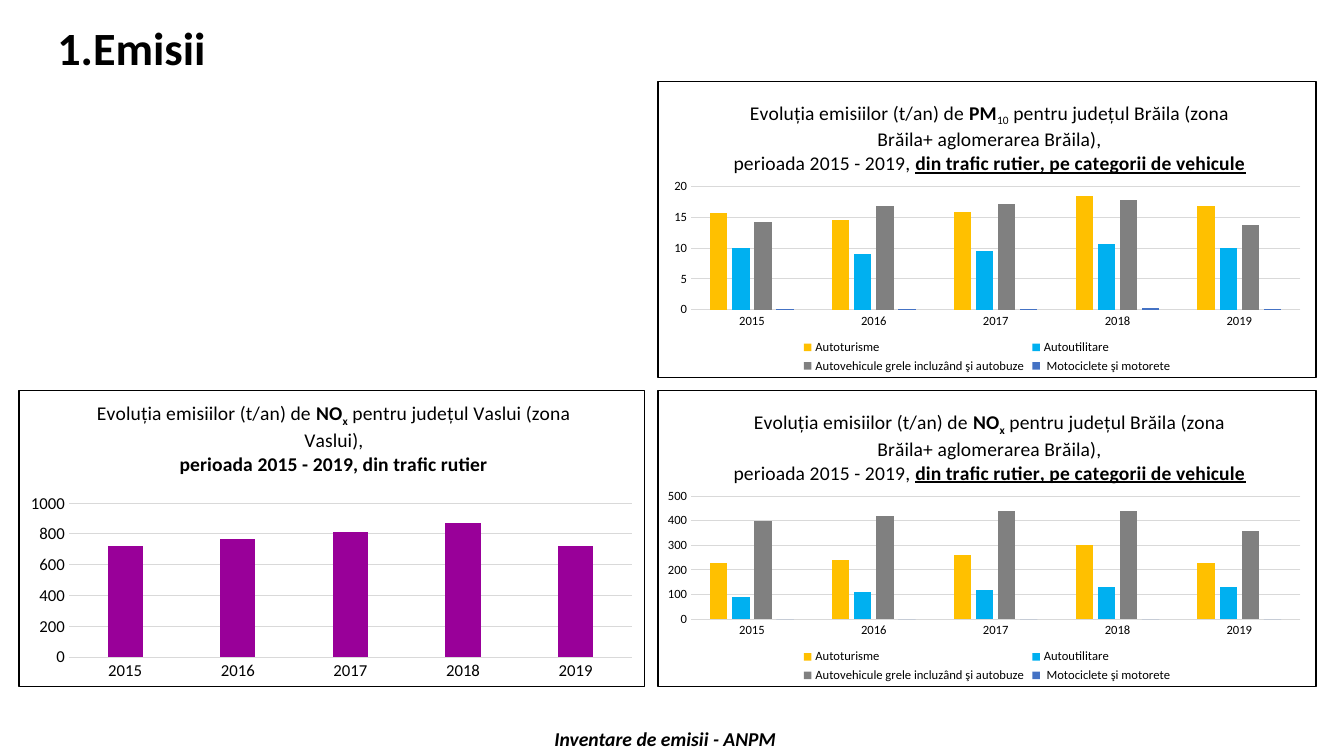
from dataclasses import dataclass

from lxml import etree
from pptx import Presentation
from pptx import util as u
from pptx.chart import data as chart_data
from pptx.dml import color
from pptx.enum import chart as chart_enum
from pptx.oxml import ns


@dataclass(frozen=True)
class Theme:
    font: str = "Calibri"
    ink: str = "000000"
    paper: str = "FFFFFF"
    grid: str = "D9D9D9"
    total: str = "990099"
    vehicles: tuple = ("FFC000", "00B0F0", "808080", "4472C4")
    heading: int = 33
    body: int = 14
    axis_large: int = 12
    axis_small: int = 9


def rgb(value):
    return color.RGBColor.from_string(value)


def set_layout(parent, position, frame, inner=False):
    layout = parent.find(ns.qn("c:layout"))
    if layout is None:
        layout = etree.Element(ns.qn("c:layout"))
        parent.insert(position, layout)
    for child in list(layout):
        layout.remove(child)
    manual = etree.SubElement(layout, ns.qn("c:manualLayout"))
    settings = [("layoutTarget", "inner")] if inner else []
    settings += [("xMode", "edge"), ("yMode", "edge")]
    settings += list(zip("xywh", frame))
    for name, value in settings:
        etree.SubElement(manual, ns.qn(f"c:{name}"), val=str(value))


class EmissionsSlide:
    def __init__(self, presentation, theme):
        self.theme = theme
        self.slide = presentation.slides.add_slide(presentation.slide_layouts[6])

    def style(self, font, size, bold=False, italic=False):
        font.name = self.theme.font
        font.size = u.Pt(size)
        font.bold = bold
        font.italic = italic
        font.color.rgb = rgb(self.theme.ink)

    def text(self, frame, words, size, italic=False, numbered=False):
        shape = self.slide.shapes.add_textbox(*map(u.Inches, frame))
        shape.text_frame.word_wrap = True
        paragraph = shape.text_frame.paragraphs[0]
        if numbered:
            paragraph.level = 1
            properties = paragraph._p.get_or_add_pPr()
            properties.set("marL", "0")
            properties.set("indent", str(-u.Inches(0.5)))
            etree.SubElement(properties, ns.qn("a:buFont"), typeface="+mj-lt")
            etree.SubElement(properties, ns.qn("a:buAutoNum"), type="arabicPeriod")
        run = paragraph.add_run()
        run.text = words
        self.style(run.font, size, True, italic)

    def title(self, chart, lines, corner):
        chart.has_title = True
        text_frame = chart.chart_title.text_frame
        for index, line in enumerate(lines):
            paragraph = text_frame.add_paragraph() if index else text_frame.paragraphs[0]
            for words, marks in line:
                run = paragraph.add_run()
                run.text = words
                self.style(run.font, self.theme.body, "b" in marks)
                run.font.underline = "u" in marks
                if "s" in marks:
                    run.font._element.set("baseline", "-25000")
        set_layout(chart.chart_title._element, 1, corner)

    def border(self, chart):
        properties = etree.Element(ns.qn("c:spPr"))
        line = etree.Element(ns.qn("a:ln"), w=str(u.Pt(1)))
        for parent, value in ((properties, self.theme.paper), (line, self.theme.ink)):
            fill = etree.SubElement(parent, ns.qn("a:solidFill"))
            etree.SubElement(fill, ns.qn("a:srgbClr"), val=value)
        properties.append(line)
        chart._chartSpace.find(ns.qn("c:chart")).addnext(properties)

    def axes(self, chart, size, maximum, step):
        category, value = chart.category_axis, chart.value_axis
        for axis in (category, value):
            axis.major_tick_mark = chart_enum.XL_TICK_MARK.NONE
            axis.minor_tick_mark = chart_enum.XL_TICK_MARK.NONE
            self.style(axis.tick_labels.font, size)
        value.minimum_scale, value.maximum_scale = 0, maximum
        value.major_unit = step
        value.has_major_gridlines = True
        value.format.line.fill.background()
        value.tick_labels.number_format = "0"
        value.tick_labels.number_format_is_linked = False
        for line in (category.format.line, value.major_gridlines.format.line):
            line.color.rgb = rgb(self.theme.grid)
            line.width = u.Pt(0.75)

    def chart(self, frame, title, corner, plot_frame, series, colors, size, maximum, step):
        data = chart_data.CategoryChartData()
        data.categories = [str(year) for year in range(2015, 2020)]
        for name, values in series:
            data.add_series(name, values)
        chart = self.slide.shapes.add_chart(
            chart_enum.XL_CHART_TYPE.COLUMN_CLUSTERED, *map(u.Inches, frame), data
        ).chart
        self.style(chart.font, 10)
        self.border(chart)
        self.title(chart, title, corner)
        self.axes(chart, size, maximum, step)
        plot = chart.plots[0]
        plot.gap_width, plot.overlap = 219, -27
        plot.vary_by_categories = False
        for item, value in zip(plot.series, colors):
            item.format.fill.solid()
            item.format.fill.fore_color.rgb = rgb(value)
        chart.has_legend = len(series) > 1
        if chart.has_legend:
            chart.legend.position = chart_enum.XL_LEGEND_POSITION.BOTTOM
            chart.legend.include_in_layout = False
            self.style(chart.legend.font, size)
        plot_area = chart._chartSpace.find(".//" + ns.qn("c:plotArea"))
        set_layout(plot_area, 0, plot_frame, inner=True)

    def vehicle_chart(self, top, pollutant, values, maximum, step):
        names = (
            "Autoturisme",
            "Autoutilitare",
            "Autovehicule grele incluzând şi autobuze",
            " Motociclete şi motorete",
        )
        title = [
            [("Evoluția emisiilor (t/an) de ", ""), *pollutant,
             (" pentru județul Brăila (zona Brăila+ aglomerarea Brăila),", "")],
            [("perioada 2015 - 2019, ", ""),
             ("din trafic rutier, pe categorii de vehicule", "bu")],
        ]
        self.chart(
            (6.52, top, 6.54, 2.95), title, (0.11, 0.05), (0.05, 0.356, 0.926, 0.416),
            list(zip(names, values)), self.theme.vehicles, self.theme.axis_small, maximum, step,
        )


def main():
    presentation = Presentation()
    presentation.slide_width = u.Inches(13.33)
    presentation.slide_height = u.Inches(7.5)
    theme = Theme()
    page = EmissionsSlide(presentation, theme)
    nox = [("NO", "b"), ("x", "bs")]

    page.text((0.47, 0.14, 1.98, 0.66), "Emisii", theme.heading, numbered=True)
    page.text((5.4, 7.16, 3.14, 0.34), "Inventare de emisii - ANPM", theme.body, italic=True)
    page.vehicle_chart(0.8, [("PM", "b"), ("10", "s")], (
        (15.7, 14.5, 15.8, 18.5, 16.8),
        (10.1, 9.1, 9.6, 10.7, 10.1),
        (14.3, 16.9, 17.1, 17.8, 13.8),
        (0.1, 0.1, 0.1, 0.2, 0.1),
    ), 20, 5)
    page.chart(
        (0.18, 3.87, 6.22, 2.95),
        [
            [("Evoluția emisiilor (t/an) de ", ""), *nox,
             (" pentru județul Vaslui (zona Vaslui),", "")],
            [("perioada 2015 - 2019, din trafic rutier", "b")],
        ],
        (0.12, 0.02), (0.08, 0.38, 0.9, 0.52),
        [("Series 1", (720, 770, 810, 870, 720))], [theme.total], theme.axis_large, 1000, 200,
    )
    page.vehicle_chart(3.87, nox, (
        (230, 240, 260, 300, 230),
        (90, 110, 120, 130, 130),
        (400, 420, 440, 440, 360),
        (0, 0, 0, 0, 0),
    ), 500, 100)
    presentation.save("out.pptx")


if __name__ == "__main__":
    main()
